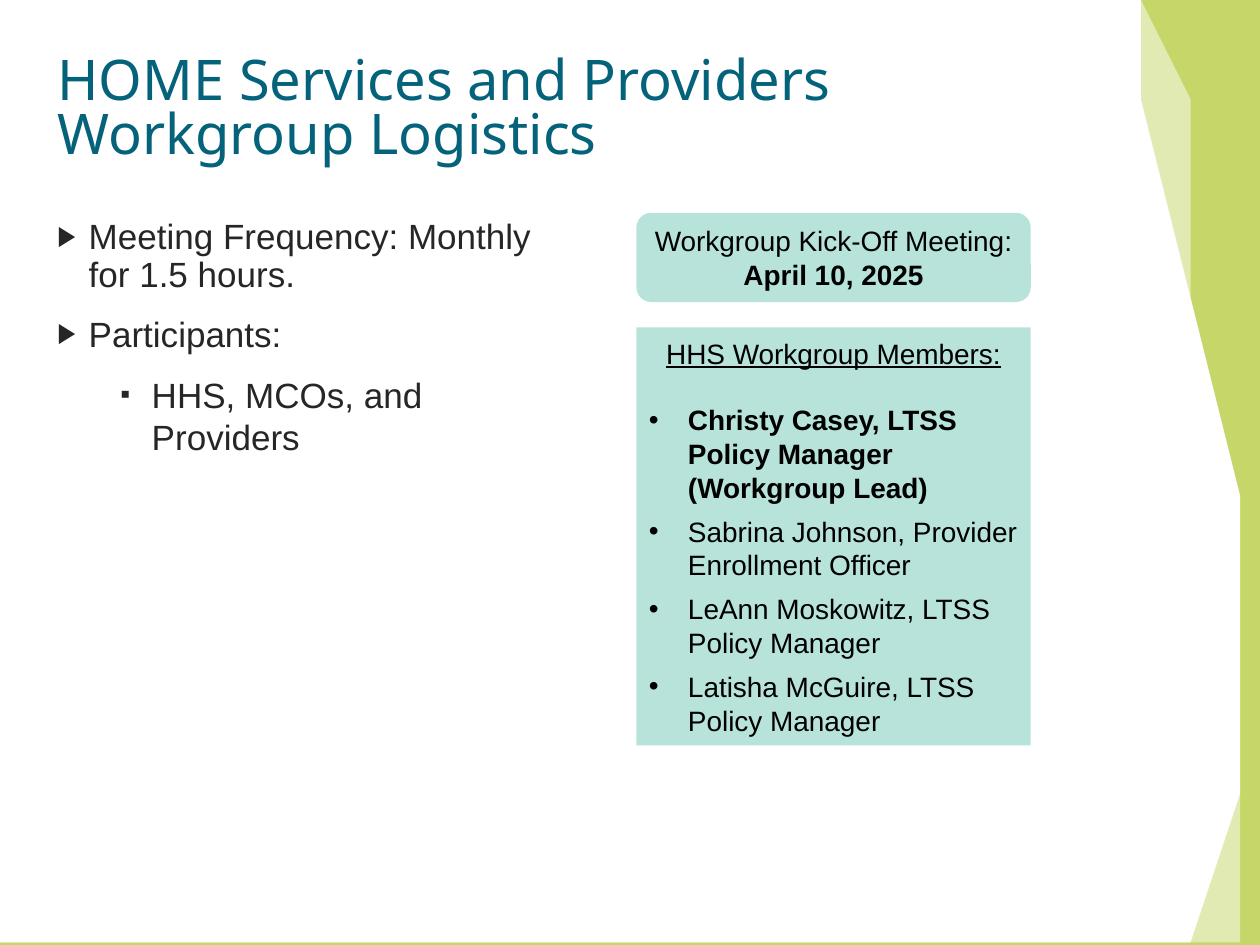
import pptx
import pptx.dml.color
import pptx.enum.shapes
import pptx.enum.text
import pptx.oxml.ns
import pptx.util
from lxml import etree

Cm, Pt = pptx.util.Cm, pptx.util.Pt
RGB = pptx.dml.color.RGBColor
KIND = pptx.enum.shapes.MSO_SHAPE
ANCHOR = pptx.enum.text.MSO_ANCHOR
CENTER = pptx.enum.text.PP_ALIGN.CENTER

LIME = RGB(0xC6, 0xD6, 0x68)
PALE = RGB(0xE2, 0xEA, 0xB3)
WHITE = RGB(0xFF, 0xFF, 0xFF)
TEAL = RGB(0x04, 0x62, 0x7A)
MINT = RGB(0x70, 0xC8, 0xB8)
GREY = RGB(0x26, 0x26, 0x26)
BLACK = RGB(0, 0, 0)

# Each paragraph: text, paragraph format, font format, bullet
# Each bullet: character, size in percent, text indent, hang (cm)
ARROW = ("▶", 80, 0.63, 0.63)
SQUARE = ("▪", 80, 1.9, 0.63)
DOT = ("•", 100, 0.79, 0.79)
MID = {"alignment": CENTER}
AFTER = {"space_after": Pt(6)}

TITLE = [("HOME Services and Providers Workgroup Logistics",
          {"line_spacing": 0.8}, {}, None)]
BODY = [
    ("Meeting Frequency: Monthly for 1.5 hours.", {"line_spacing": 0.9}, {}, ARROW),
    ("Participants:", {"space_before": Pt(10), **AFTER}, {}, ARROW),
    ("HHS, MCOs, and Providers", {"space_before": Pt(5), **AFTER}, {}, SQUARE),
]
KICKOFF = [
    ("Workgroup Kick-Off Meeting:", MID, {}, None),
    ("April 10, 2025", MID, {"bold": True}, None),
]
MEMBERS = [
    ("HHS Workgroup Members:", {**MID, "space_after": Pt(19)}, {"underline": True}, None),
    ("Christy Casey, LTSS Policy Manager (Workgroup Lead)", AFTER, {"bold": True}, DOT),
    ("Sabrina Johnson, Provider Enrollment Officer", AFTER, {}, DOT),
    ("LeAnn Moskowitz, LTSS Policy Manager", AFTER, {}, DOT),
    ("Latisha McGuire, LTSS Policy Manager", {}, {}, DOT),
]

# Right edge of the white page, in cm, with one curved stretch
UPPER = [(0, -0.05), (22.63, 0), (23.39, 2.18), (23.85, 6.5)]
CURVE = [(24.51, 10.44), (24.46, 11.3), (24.69, 15.57), (24.61, 16.28)]
LOWER = [(24.28, 19.15), (0, 19.1)]
WAIST = 9.55


def bend(ends, steps=10):
    """Points along a cubic Bezier curve."""
    points = []
    for i in range(steps + 1):
        t = i / steps
        parts = ((1 - t) ** 3, 3 * t * (1 - t) ** 2, 3 * t * t * (1 - t), t ** 3)
        points.append(tuple(sum(w * p[k] for w, p in zip(parts, ends)) for k in (0, 1)))
    return points


def paint(shape, color):
    shape.shadow.inherit = False
    shape.fill.solid()
    shape.fill.fore_color.rgb = color
    shape.line.fill.background()


def page(slide, color, wide=1, high=1):
    """Draw the page outline, stretched from the left edge and the waist."""
    points = [(x * wide, WAIST + (y - WAIST) * high)
              for x, y in UPPER + bend(CURVE) + LOWER]
    pen = slide.shapes.build_freeform(*points[0], scale=Cm(1))
    pen.add_line_segments(points[1:], close=True)
    paint(pen.convert_to_shape(), color)


def mark(para, sign, size, left, hang):
    props = para._p.get_or_add_pPr()
    props.set("marL", str(Cm(left)))
    props.set("indent", str(-Cm(hang)))
    for tag, key, value in (("buSzPct", "val", str(size * 1000)),
                            ("buFont", "typeface", "Arial"),
                            ("buChar", "char", sign)):
        etree.SubElement(props, pptx.oxml.ns.qn("a:" + tag)).set(key, value)


def write(shape, paras, anchor, face, size, color):
    frame = shape.text_frame
    frame.word_wrap = True
    frame.vertical_anchor = anchor
    for i, (text, style, look, sign) in enumerate(paras):
        para = frame.add_paragraph() if i else frame.paragraphs[0]
        if sign:
            mark(para, *sign)
        for key, value in style.items():
            setattr(para, key, value)
        run = para.add_run()
        run.text = text
        for key, value in {"name": face, "size": Pt(size), **look}.items():
            setattr(run.font, key, value)
        run.font.color.rgb = color


def card(slide, kind, place, paras):
    """Add a half-transparent mint box with text."""
    shape = slide.shapes.add_shape(kind, *map(Cm, place))
    paint(shape, MINT)
    tint = shape._element.spPr.find(".//" + pptx.oxml.ns.qn("a:srgbClr"))
    etree.SubElement(tint, pptx.oxml.ns.qn("a:alpha")).set("val", "50000")
    write(shape, paras, ANCHOR.MIDDLE, "Arial", 16, BLACK)
    for para in shape.text_frame.paragraphs:
        if para.alignment is None:
            para.alignment = pptx.enum.text.PP_ALIGN.LEFT


def main():
    deck = pptx.Presentation()
    deck.slide_width, deck.slide_height = Cm(25.4), Cm(19.05)
    slide = deck.slides.add_slide(deck.slide_layouts[6])
    slide.background.fill.solid()
    slide.background.fill.fore_color.rgb = LIME
    page(slide, PALE, 1.02, 1.03)
    page(slide, WHITE)

    head = slide.shapes.add_textbox(Cm(0.91), Cm(0.36), Cm(17.12), Cm(3.76))
    write(head, TITLE, ANCHOR.MIDDLE, "Noto Sans", 32, TEAL)
    body = slide.shapes.add_textbox(Cm(0.91), Cm(4.29), Cm(10.67), Cm(12.09))
    write(body, BODY, ANCHOR.TOP, "Arial", 20, GREY)

    card(slide, KIND.ROUNDED_RECTANGLE, (12.83, 4.29, 7.95, 1.8), KICKOFF)
    card(slide, KIND.RECTANGLE, (12.83, 6.6, 7.95, 8.43), MEMBERS)
    deck.save("out.pptx")


if __name__ == "__main__":
    main()
